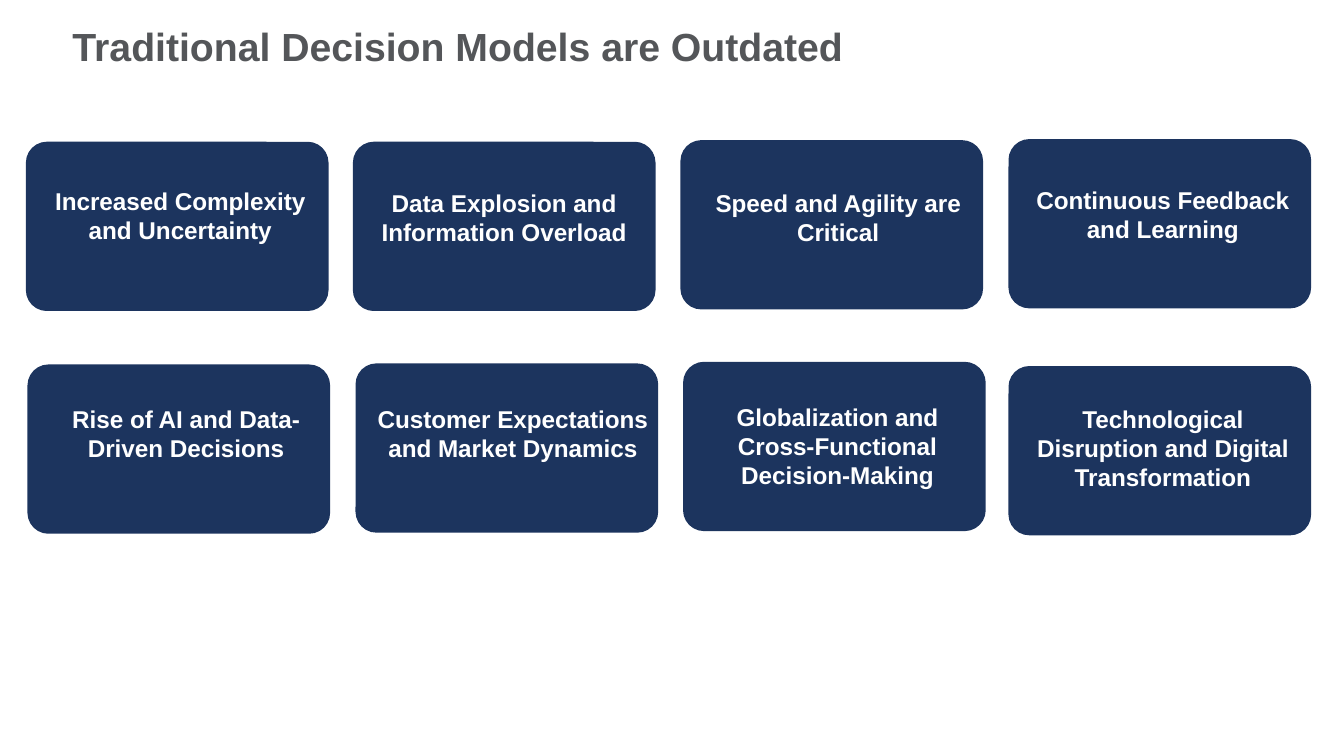
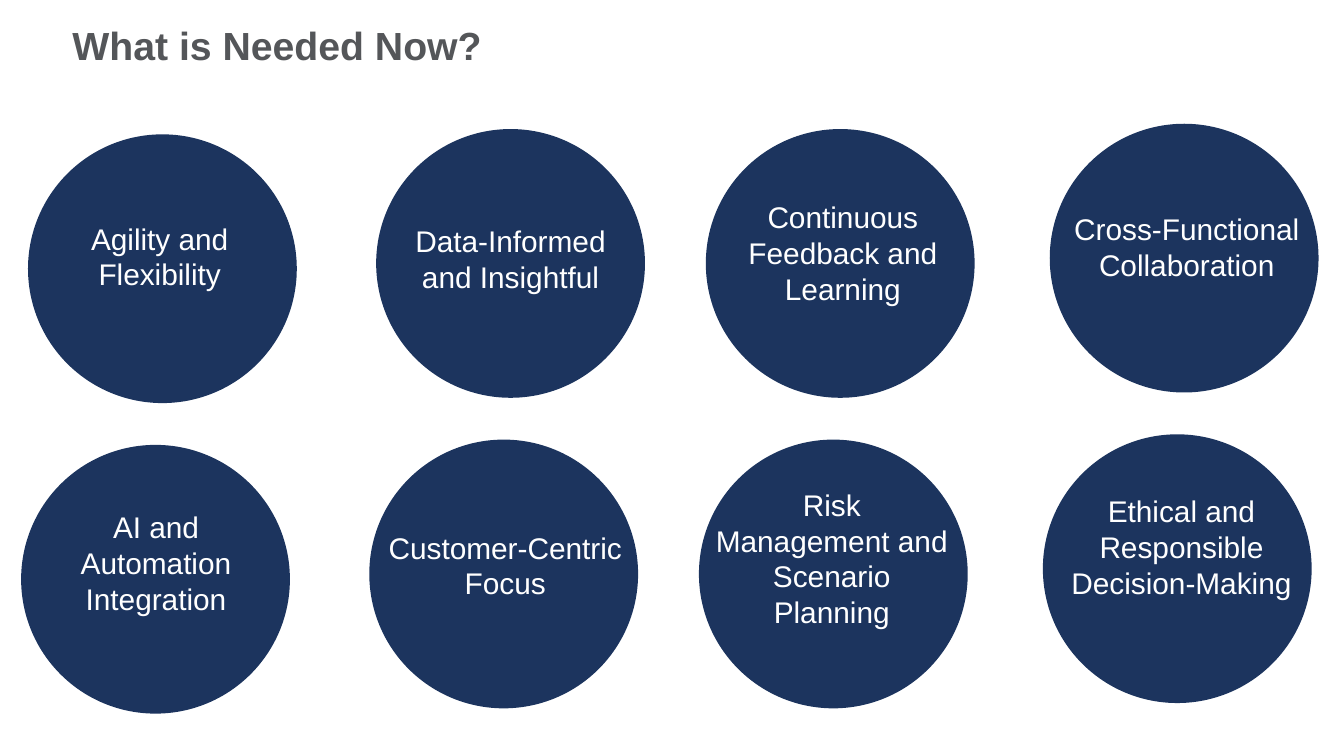
"""Builds two slides on why decision models must change and what is needed now."""
from pptx import Presentation, util as u
from pptx.dml import color
from pptx.enum import shapes, text

COLORS = {"navy": "1C345E", "title": "545659", "white": "FFFFFF"}
FONT = "Arial"


def add_text(s, words, left, top, width, height, size, hue, bold, centred=True):
    box = s.shapes.add_textbox(u.Cm(left), u.Cm(top), u.Cm(width), u.Cm(height))
    tf = box.text_frame
    tf.word_wrap = True
    tf.auto_size = text.MSO_AUTO_SIZE.SHAPE_TO_FIT_TEXT
    p = tf.paragraphs[0]
    p.text = words
    p.font.name, p.font.size, p.font.bold = FONT, u.Pt(size), bold
    p.font.color.rgb = color.RGBColor.from_string(COLORS[hue])
    if centred:
        p.alignment = text.PP_ALIGN.CENTER
    else:
        tf.margin_left = tf.margin_right = tf.margin_top = tf.margin_bottom = 0


def add_panel(s, kind, left, top, width, height):
    sp = s.shapes.add_shape(kind, u.Cm(left), u.Cm(top), u.Cm(width), u.Cm(height))
    sp.shadow.inherit = False
    sp.fill.solid()
    sp.fill.fore_color.rgb = color.RGBColor.from_string(COLORS["navy"])
    return sp


prs = Presentation()
prs.slide_width, prs.slide_height = u.Cm(25.4), u.Cm(14.29)
slides = []
for title, top in [("Traditional Decision Models are Outdated", 0.43),
                   ("What is Needed Now?", 0.41)]:
    s = prs.slides.add_slide(prs.slide_layouts[6])
    add_text(s, title, 1.37, top, 23.7, 0.89, 21, "title", True, centred=False)
    slides.append(s)

# Each entry: panel left and top, then label, its left, top, width and line count.
CARDS = [
    (0.53, 2.72, "Increased Complexity and Uncertainty", 0.56, 3.4, 5.69, 2),
    (6.71, 2.72, "Data Explosion and Information Overload", 6.73, 3.43, 5.59, 2),
    (12.9, 2.69, "Speed and Agility are Critical", 12.93, 3.43, 5.82, 2),
    (19.1, 2.67, "Continuous Feedback and Learning", 19.13, 3.38, 5.69, 2),
    (0.56, 6.93, "Rise of AI and Data-Driven Decisions", 0.86, 7.52, 5.31, 2),
    (6.76, 6.91, "Customer Expectations and Market Dynamics", 6.78, 7.52, 5.82, 2),
    (12.95, 6.88, "Globalization and Cross-Functional Decision-Making", 12.98, 7.47, 5.69, 3),
    (19.1, 6.96, "Technological Disruption and Digital Transformation", 19.13, 7.52, 5.69, 3),
]
for left, top, label, text_left, text_top, text_width, lines in CARDS:
    card = add_panel(slides[0], shapes.MSO_SHAPE.ROUNDED_RECTANGLE, left, top, 5.64, 3.12)
    card.adjustments[0] = 0.114
    card.line.color.rgb = color.RGBColor.from_string(COLORS["navy"])
    card.line.width = u.Pt(2.25)
    add_text(slides[0], label, text_left, text_top, text_width,
             0.25 + 0.56 * lines, 13, "white", True)

CIRCLE_COLUMNS = [(0.53, 2.54), (7.11, 2.44), (13.34, 2.44), (19.84, 2.34)]
CIRCLE_LABELS = [
    [("Agility and Flexibility", 0.53, 4.04, 2),
     ("Data-Informed and Insightful", 7.16, 4.09, 2),
     ("Continuous Feedback and Learning", 13.44, 3.63, 3),
     ("Cross-Functional Collaboration", 19.94, 3.86, 2)],
    [("AI and Automation Integration", 0.46, 9.5, 3),
     ("Customer-Centric Focus", 7.06, 9.88, 2),
     ("Risk Management and Scenario Planning", 13.23, 9.07, 4),
     ("Ethical and Responsible Decision-Making", 19.84, 9.19, 3)],
]
for row, labels in enumerate(CIRCLE_LABELS):
    for (left, top), (label, text_left, text_top, lines) in zip(CIRCLE_COLUMNS, labels):
        circle = add_panel(slides[1], shapes.MSO_SHAPE.OVAL,
                           left - 0.13 * row, top + 5.87 * row, 5.08, 5.08)
        circle.line.fill.background()
        add_text(slides[1], label, text_left, text_top, 4.98,
                 0.25 + 0.69 * lines, 16, "white", False)

prs.save("out.pptx")
